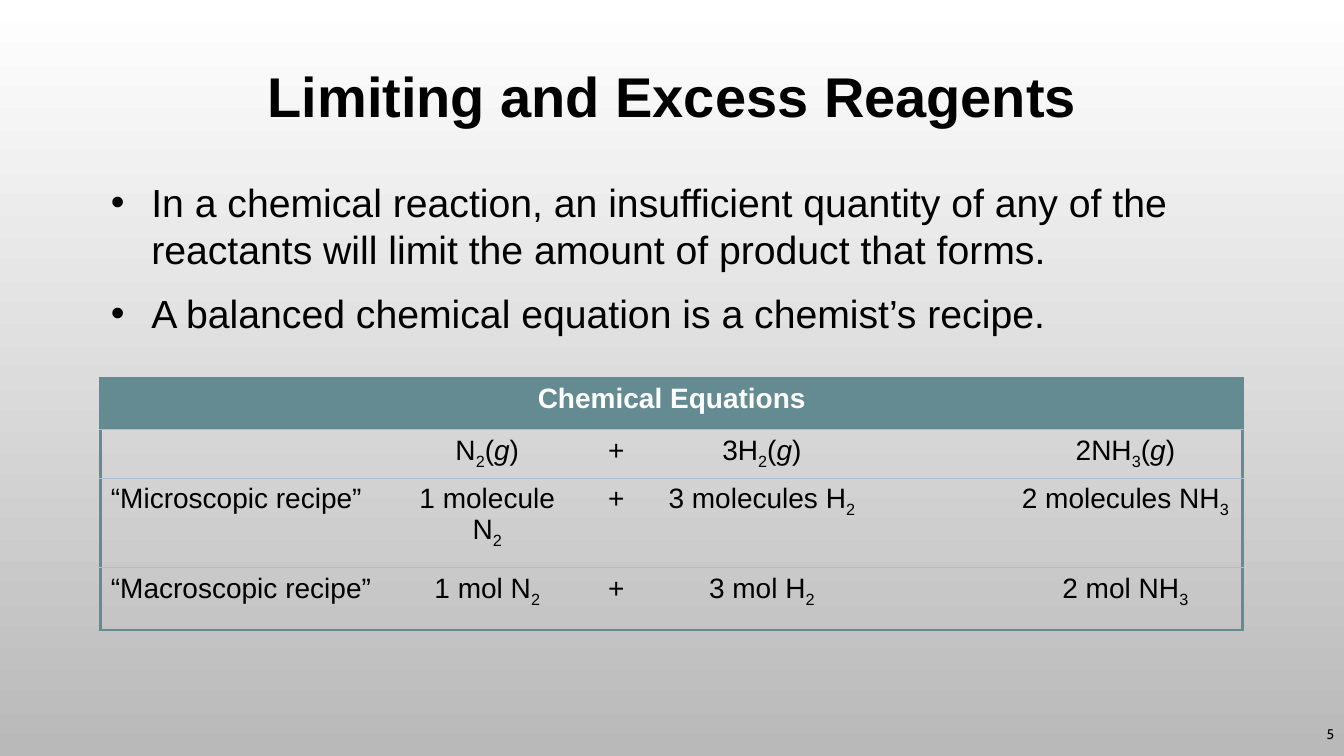
from dataclasses import dataclass

from lxml.etree import SubElement
from pptx import Presentation
from pptx.dml.color import RGBColor
from pptx.enum.text import MSO_ANCHOR, MSO_AUTO_SIZE, PP_ALIGN
from pptx.oxml.ns import qn
from pptx.util import Cm, Pt


@dataclass(frozen=True)
class Theme:
    ink: str = "000000"
    white: str = "FFFFFF"
    shade: str = "B9B9B9"
    teal: str = "658B92"
    rule: str = "AABED7"
    font: str = "Arial"
    number_font: str = "Cabin"
    title_size: int = 40
    body_size: int = 28
    table_size: int = 20
    number_size: int = 10
    frame_width: float = 2.25
    rule_width: float = 1


@dataclass(frozen=True)
class Box:
    left: float
    top: float
    width: float
    height: float

    def lengths(self):
        return Cm(self.left), Cm(self.top), Cm(self.width), Cm(self.height)


THEME = Theme()
NO_GRID_STYLE = "{2D5ABB26-0587-4C30-8999-92F81FD0307C}"
MARGIN, CONTENT_WIDTH = 2.54, 28.78

POINTS = [
    "In a chemical reaction, an insufficient quantity of any of the "
    "reactants will limit the amount of product that forms.",
    "A balanced chemical equation is a chemist’s recipe.",
]
# Subscripts stand between underscores, italics between asterisks
HEADING = "Chemical Equations"
EQUATIONS = [
    ["", "N_2_(*g*)", "+", "3H_2_(*g*)", "", "2NH_3_(*g*)"],
    ["“Microscopic recipe”", "1 molecule N_2_", "+", "3 molecules H_2_", "", "2 molecules NH_3_"],
    ["“Macroscopic recipe”", "1 mol N_2_", "+", "3 mol H_2_", "", "2 mol NH_3_"],
]
COLUMN_WIDTHS = [7.34, 4.8, 1.7, 5.64, 3.38, 5.92]
ROW_HEIGHTS = [1.3, 1.17, 2.26, 1.57]


def style(font, size, color=THEME.ink, name=THEME.font, bold=False):
    font.size, font.name, font.bold = Pt(size), name, bold
    font.color.rgb = RGBColor.from_string(color)


def place(part, box):
    part.left, part.top, part.width, part.height = box.lengths()


def paint_background(slide):
    fill = slide.background.fill
    fill.gradient()
    fill.gradient_angle = 270
    for stop, position, color in zip(fill.gradient_stops, (0, 1), (THEME.white, THEME.shade)):
        stop.position = position
        stop.color.rgb = RGBColor.from_string(color)


def add_title(slide, box):
    title = slide.shapes.title
    place(title, box)
    frame = title.text_frame
    frame.text = "Limiting and Excess Reagents"
    frame.auto_size = MSO_AUTO_SIZE.NONE
    frame.vertical_anchor = MSO_ANCHOR.MIDDLE
    heading = frame.paragraphs[0]
    heading.alignment = PP_ALIGN.CENTER
    heading.line_spacing = 0.9
    style(heading.runs[0].font, THEME.title_size, bold=True)


def add_points(slide, box):
    body = slide.placeholders[1]
    place(body, box)
    frame = body.text_frame
    frame.text = "\n".join(POINTS)
    frame.auto_size = MSO_AUTO_SIZE.NONE
    frame.vertical_anchor = MSO_ANCHOR.TOP
    for point in frame.paragraphs:
        point.space_before, point.space_after = Pt(0), Pt(12)
        properties = point._p.get_or_add_pPr()
        properties.set("marL", str(Cm(1.02)))
        properties.set("indent", str(Cm(-1.02)))
        bullet_color = SubElement(properties, qn("a:buClr"))
        SubElement(bullet_color, qn("a:srgbClr"), val=THEME.ink)
        SubElement(properties, qn("a:buFont"), typeface=THEME.font)
        SubElement(properties, qn("a:buChar"), char="•")
        style(point.runs[0].font, THEME.body_size)


def write_formula(paragraph, formula, color, bold):
    for i, level in enumerate(formula.split("_")):
        for j, piece in enumerate(level.split("*")):
            if not piece:
                continue
            run = paragraph.add_run()
            run.text = piece
            style(run.font, THEME.table_size, color, bold=bold)
            if j % 2:
                run.font.italic = True
            if i % 2:
                run._r.get_or_add_rPr().set("baseline", "-25000")


def set_border(properties, side, color, width):
    line = SubElement(properties, qn(f"a:ln{side}"), w=str(Pt(width)))
    SubElement(SubElement(line, qn("a:solidFill")), qn("a:srgbClr"), val=color)


def draw_borders(cell, row, column):
    """Teal frame round the table, thin rules between the rows."""
    frame = (THEME.teal, THEME.frame_width)
    rule = (THEME.rule, THEME.rule_width)
    properties = cell._tc.get_or_add_tcPr()
    if column == 0:
        set_border(properties, "L", *frame)
    if column == len(COLUMN_WIDTHS) - 1 or cell.is_merge_origin:
        set_border(properties, "R", *frame)
    set_border(properties, "T", *(frame if row == 0 else rule))
    set_border(properties, "B", *(frame if row == len(ROW_HEIGHTS) - 1 else rule))


def add_equations(slide, box):
    graphic = slide.shapes.add_table(len(ROW_HEIGHTS), len(COLUMN_WIDTHS), *box.lengths())
    table = graphic.table
    table.first_row = table.horz_banding = False
    table._tbl.tblPr.find(qn("a:tableStyleId")).text = NO_GRID_STYLE
    for column, width in zip(table.columns, COLUMN_WIDTHS):
        column.width = Cm(width)
    for row, height in zip(table.rows, ROW_HEIGHTS):
        row.height = Cm(height)
    table.cell(0, 0).merge(table.cell(0, len(COLUMN_WIDTHS) - 1))

    heading_row = [HEADING] + [""] * (len(COLUMN_WIDTHS) - 1)
    for r, formulas in enumerate([heading_row] + EQUATIONS):
        for c, formula in enumerate(formulas):
            cell = table.cell(r, c)
            draw_borders(cell, r, c)
            is_heading = r == 0
            if is_heading:
                cell.fill.solid()
                cell.fill.fore_color.rgb = RGBColor.from_string(THEME.teal)
            else:
                cell.fill.background()
            entry = cell.text_frame.paragraphs[0]
            entry.alignment = PP_ALIGN.CENTER if is_heading or c else PP_ALIGN.LEFT
            write_formula(entry, formula, THEME.white if is_heading else THEME.ink, is_heading)


def add_page_number(slide, box):
    frame = slide.shapes.add_textbox(*box.lengths()).text_frame
    frame.word_wrap = True
    frame.vertical_anchor = MSO_ANCHOR.MIDDLE
    frame.text = "5"
    number = frame.paragraphs[0]
    number.alignment = PP_ALIGN.RIGHT
    style(number.runs[0].font, THEME.number_size, name=THEME.number_font)


def main():
    deck = Presentation()
    deck.slide_width, deck.slide_height = Cm(33.87), Cm(19.05)
    slide = deck.slides.add_slide(deck.slide_layouts[1])
    paint_background(slide)
    add_title(slide, Box(MARGIN, 1.73, CONTENT_WIDTH, 1.55))
    add_points(slide, Box(MARGIN, 4.37, CONTENT_WIDTH, 12.95))
    add_page_number(slide, Box(31.75, 17.98, 2.12, 1.02))
    add_equations(slide, Box(MARGIN, 9.53, CONTENT_WIDTH, sum(ROW_HEIGHTS)))
    deck.save("out.pptx")


if __name__ == "__main__":
    main()
